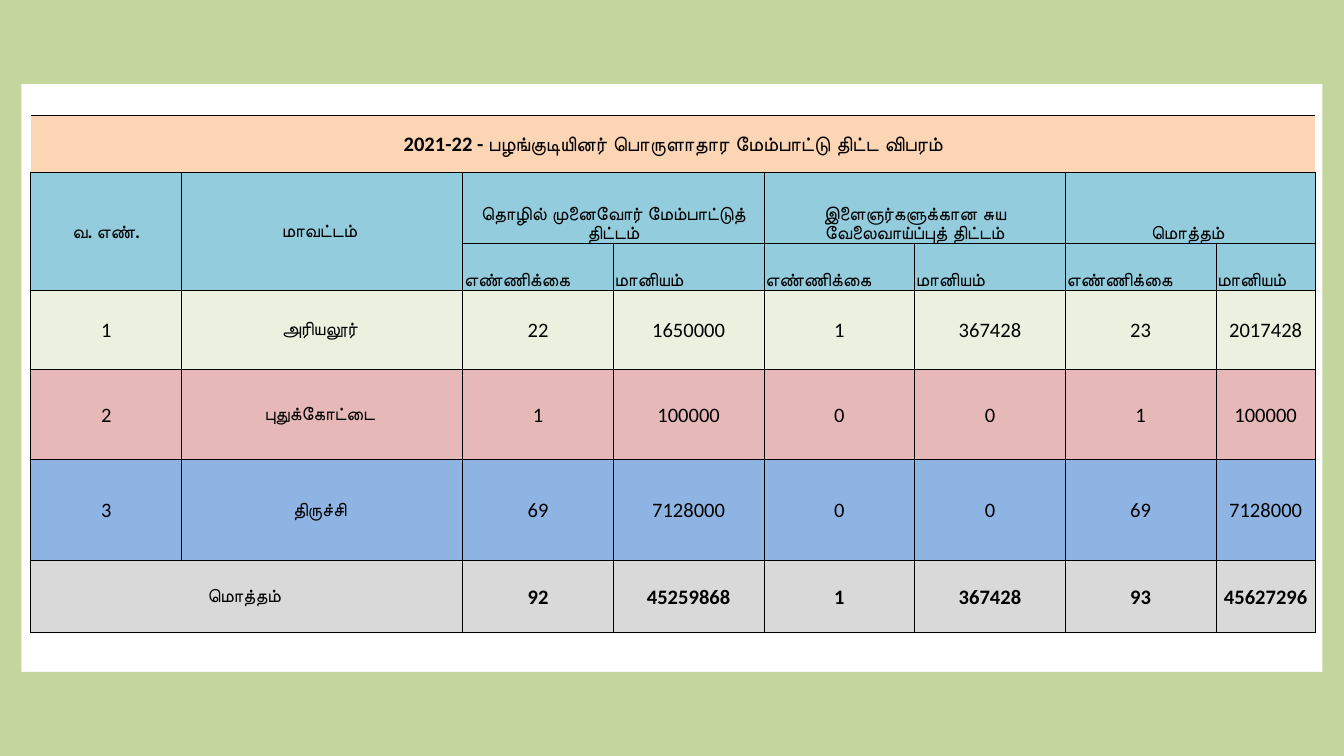
from dataclasses import dataclass
from lxml import etree
from pptx import Presentation
from pptx.dml.color import RGBColor
from pptx.enum.shapes import MSO_SHAPE
from pptx.enum.text import MSO_ANCHOR, PP_ALIGN
from pptx.oxml.ns import qn
from pptx.util import Inches, Pt

RECT = MSO_SHAPE.RECTANGLE
MIDDLE, BOTTOM = MSO_ANCHOR.MIDDLE, MSO_ANCHOR.BOTTOM
LEFT, CENTER = PP_ALIGN.LEFT, PP_ALIGN.CENTER


@dataclass(frozen=True)
class Theme:
    font: str = "Calibri"
    ink: str = "000000"
    frame: str = "C3D69B"
    title: str = "FCD5B5"
    head: str = "93CDDD"
    rows: tuple = ("EBF1DE", "E6B9B8", "8EB4E3")
    total: str = "D9D9D9"
    large: int = 11
    small: int = 10
    line: float = 0.5


THEME = Theme()
WIDE = 10
HIGH = WIDE * 9 / 16
COLS = (1.12, 2.09, 1.12, 1.12, 1.12, 1.12, 1.12, 0.74)
ROWS = (0.42, 0.53, 0.35, 0.59, 0.67, 0.75, 0.54)
INSETS = {"margin_left": 0.01, "margin_right": 0.01,
          "margin_top": 0.01, "margin_bottom": 0}

TITLE = "2021-22 - பழங்குடியினர் பொருளாதார மேம்பாட்டு திட்ட விபரம்"
LABELS = ("வ. எண்.", "மாவட்டம் ")
SUM = "மொத்தம் "
GROUPS = ("தொழில் முனைவோர் மேம்பாட்டுத் திட்டம்",
          "இளைஞர்களுக்கான சுய வேலைவாய்ப்புத் திட்டம்", SUM)
PAIR = ("எண்ணிக்கை", "மானியம்")
DATA = (
    ("1", "அரியலூர் ", "22", "1650000", "1", "367428", "23", "2017428"),
    ("2", "புதுக்கோட்டை ", "1", "100000", "0", "0", "1", "100000"),
    ("3", "திருச்சி ", "69", "7128000", "0", "0", "69", "7128000"),
)
TOTALS = ("92", "45259868", "1", "367428", "93", "45627296")


def color(code):
    return RGBColor.from_string(code)


def edge(cell, side, shown=True):
    """Add one border line, which must come before the cell's fill."""
    props = cell._tc.get_or_add_tcPr()
    line = etree.SubElement(props, qn(f"a:ln{side}"), w=str(Pt(THEME.line)))
    if shown:
        fill = etree.SubElement(line, qn("a:solidFill"))
        etree.SubElement(fill, qn("a:srgbClr"), val=THEME.ink)
    else:
        etree.SubElement(line, qn("a:noFill"))


def paint(cell, fill, sides="LRTB"):
    for side in "LRTB":
        edge(cell, side, side in sides)
    cell.fill.solid()
    cell.fill.fore_color.rgb = color(fill)
    for name, size in INSETS.items():
        setattr(cell, name, Inches(size))


def write(cell, text, size, bold=False, align=CENTER, anchor=MIDDLE):
    cell.vertical_anchor = anchor
    para = cell.text_frame.paragraphs[0]
    para.alignment = align
    run = para.add_run()
    run.text = text
    style = {"name": THEME.font, "size": Pt(size), "bold": bold}
    for name, value in style.items():
        setattr(run.font, name, value)
    run.font.color.rgb = color(THEME.ink)


def add_heads(grid):
    # Title across all columns
    grid.cell(0, 0).merge(grid.cell(0, len(COLS) - 1))
    write(grid.cell(0, 0), TITLE, THEME.large, True)

    # Labels over two rows
    for col, text in enumerate(LABELS):
        grid.cell(1, col).merge(grid.cell(2, col))
        write(grid.cell(1, col), text, THEME.small, True)

    # Schemes, each over a count and a subsidy
    for num, text in enumerate(GROUPS):
        col = len(LABELS) + 2 * num
        grid.cell(1, col).merge(grid.cell(1, col + 1))
        write(grid.cell(1, col), text, THEME.small, True, anchor=BOTTOM)
        for step, name in enumerate(PAIR):
            write(grid.cell(2, col + step), name, THEME.small, True,
                  LEFT, BOTTOM)


def add_body(grid):
    # Districts
    for row, values in enumerate(DATA, 3):
        for col, text in enumerate(values):
            size = THEME.small if col == 1 else THEME.large
            write(grid.cell(row, col), text, size)

    # Totals
    last = len(ROWS) - 1
    grid.cell(last, 0).merge(grid.cell(last, 1))
    write(grid.cell(last, 0), SUM, THEME.small, True)
    for col, text in enumerate(TOTALS, 2):
        write(grid.cell(last, col), text, THEME.large, True)


def add_grid(slide, left, top, width, height):
    grid = slide.shapes.add_table(
        len(ROWS), len(COLS), Inches(left), Inches(top),
        Inches(width), Inches(height)).table
    grid.first_row = grid.horz_banding = False
    for col, size in zip(grid.columns, COLS):
        col.width = Inches(size * width / sum(COLS))
    for row, size in zip(grid.rows, ROWS):
        row.height = Inches(size * height / sum(ROWS))

    fills = (THEME.title, THEME.head, THEME.head, *THEME.rows, THEME.total)
    for num, fill in enumerate(fills):
        for col in range(len(COLS)):
            paint(grid.cell(num, col), fill, "LRTB" if num else "TB")
    add_heads(grid)
    add_body(grid)


def add_frame(slide, left, top, width, height):
    side, band = 0.16, height / 9
    bars = (
        (left, top + height - band, width, band),
        (left, top, side, height),
        (left + width - side, top, side, height),
        (left, top, width, band),
    )
    for box in bars:
        bar = slide.shapes.add_shape(RECT, *map(Inches, box))
        bar.shadow.inherit = False
        bar.fill.solid()
        bar.fill.fore_color.rgb = color(THEME.frame)
        bar.line.fill.background()


def main():
    deck = Presentation()
    deck.slide_width, deck.slide_height = Inches(WIDE), Inches(HIGH)
    slide = deck.slides.add_slide(deck.slide_layouts[6])
    add_grid(slide, 0.23, 0.86, 9.56, 3.85)
    add_frame(slide, 0, 0, WIDE, HIGH)
    deck.save("out.pptx")


if __name__ == "__main__":
    main()
